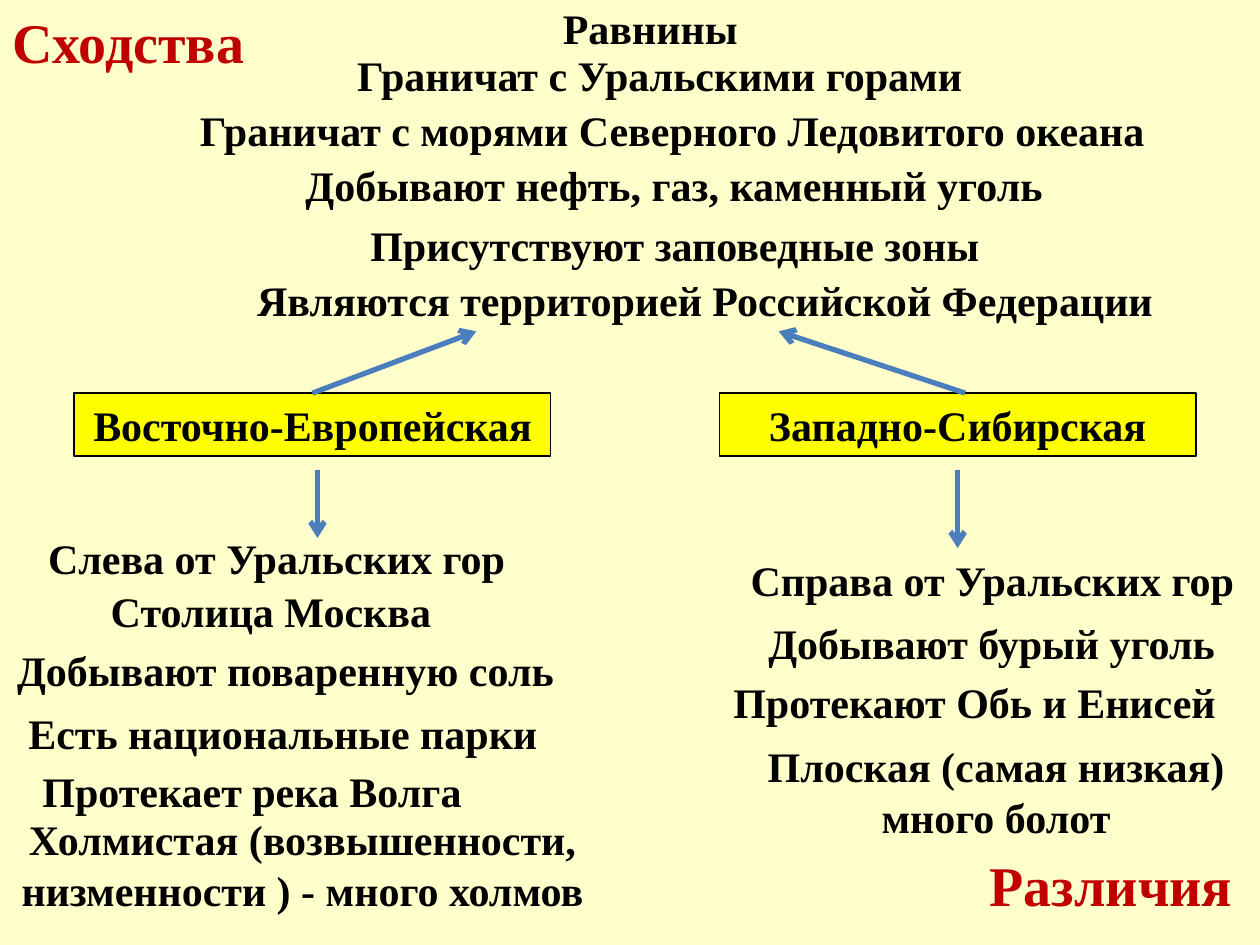
from dataclasses import dataclass

from lxml import etree
from pptx import Presentation
from pptx.dml.color import RGBColor
from pptx.enum.shapes import MSO_CONNECTOR, MSO_SHAPE
from pptx.enum.text import MSO_ANCHOR, MSO_AUTO_SIZE, PP_ALIGN
from pptx.oxml.ns import qn
from pptx.util import Inches, Pt

LEFT, CENTER, RIGHT = PP_ALIGN.LEFT, PP_ALIGN.CENTER, PP_ALIGN.RIGHT
TOP = MSO_ANCHOR.TOP
GROW = MSO_AUTO_SIZE.SHAPE_TO_FIT_TEXT
RECT = MSO_SHAPE.RECTANGLE
STRAIGHT = MSO_CONNECTOR.STRAIGHT


@dataclass(frozen=True)
class Theme:
    font: str = "Times New Roman"
    back: RGBColor = RGBColor(0xFF, 0xFF, 0xCC)
    ink: RGBColor = RGBColor(0, 0, 0)
    head: RGBColor = RGBColor(0xC0, 0, 0)
    fill: RGBColor = RGBColor(0xFF, 0xFF, 0)
    arrow: RGBColor = RGBColor(0x4B, 0x7E, 0xBC)
    body_size: int = 24
    head_size: int = 32


theme = Theme()


def write(shape, text, size=theme.body_size, color=theme.ink, align=CENTER):
    frame = shape.text_frame
    frame.word_wrap = True
    frame.auto_size = GROW
    frame.vertical_anchor = TOP
    frame.text = text
    line = frame.paragraphs[0]
    line.alignment = align
    font = line.runs[0].font
    font.name = theme.font
    font.size = Pt(size)
    font.bold = True
    font.color.rgb = color


def point(x1, y1, x2, y2):
    arrow = slide.shapes.add_connector(
        STRAIGHT, Inches(x1), Inches(y1), Inches(x2), Inches(y2))
    arrow.line.color.rgb = theme.arrow
    arrow.line.width = Pt(3)
    etree.SubElement(arrow.line._get_or_add_ln(), qn("a:tailEnd"), type="arrow")
    etree.SubElement(arrow._element.spPr, qn("a:effectLst"))
    return arrow


deck = Presentation()
deck.slide_width, deck.slide_height = Inches(10), Inches(7.5)
slide = deck.slides.add_slide(deck.slide_layouts[6])
slide.background.fill.solid()
slide.background.fill.fore_color.rgb = theme.back

plains = []
for x, name in [(0.59, "Восточно-Европейская"), (5.71, "Западно-Сибирская")]:
    plain = slide.shapes.add_shape(
        RECT, Inches(x), Inches(3.12), Inches(3.78), Inches(0.5))
    plain.shadow.inherit = False
    plain.fill.solid()
    plain.fill.fore_color.rgb = theme.fill
    plain.line.color.rgb = theme.ink
    plain.line.width = Pt(1)
    write(plain, name)
    plains.append(plain)

heads = [
    (0, 0.01, "Сходства", LEFT),
    (6.1, 6.7, "Различия", RIGHT),
]
for x, y, text, align in heads:
    box = slide.shapes.add_textbox(
        Inches(x), Inches(y), Inches(3.78), Inches(0.64))
    write(box, text, theme.head_size, theme.head, align)

shared = [
    (3.27, -0.03, 3.78, 0.5, "Равнины"),
    (2.48, 0.34, 5.51, 0.5, "Граничат с Уральскими горами"),
    (1.16, 0.78, 8.35, 0.5, "Граничат с морями Северного Ледовитого океана"),
    (1.61, 1.22, 7.48, 0.5, "Добывают нефть, газ, каменный уголь"),
    (2.48, 1.69, 5.75, 0.5, "Присутствуют заповедные зоны"),
    (1.46, 2.13, 8.27, 0.5, "Являются территорией Российской Федерации"),
]
east = [
    (0.12, 4.18, 4.15, 0.5, "Слева от Уральских гор"),
    (0.26, 4.6, 3.78, 0.5, "Столица Москва"),
    (0.01, 5.07, 4.51, 0.5, "Добывают поваренную соль"),
    (0.01, 5.57, 4.47, 0.5, "Есть национальные парки"),
    (0.11, 6.03, 3.78, 0.5, "Протекает река Волга"),
    (-0.01, 6.41, 4.82, 0.91,
     "Холмистая (возвышенности, низменности ) - много холмов"),
]
west = [
    (5.75, 4.35, 4.25, 0.5, "Справа от Уральских гор"),
    (5.98, 4.85, 3.78, 0.5, "Добывают бурый уголь"),
    (5.67, 5.32, 4.13, 0.5, "Протекают Обь и Енисей"),
    (5.85, 5.83, 4.11, 0.91, "Плоская (самая низкая) много болот"),
]
for x, y, w, h, text in shared + east + west:
    box = slide.shapes.add_textbox(Inches(x), Inches(y), Inches(w), Inches(h))
    write(box, text)

point(2.48, 3.12, 3.78, 2.63).begin_connect(plains[0], 0)
point(7.66, 3.12, 6.18, 2.63)
point(2.52, 3.73, 2.52, 4.27)
point(7.6, 3.73, 7.6, 4.35)

deck.save("out.pptx")
